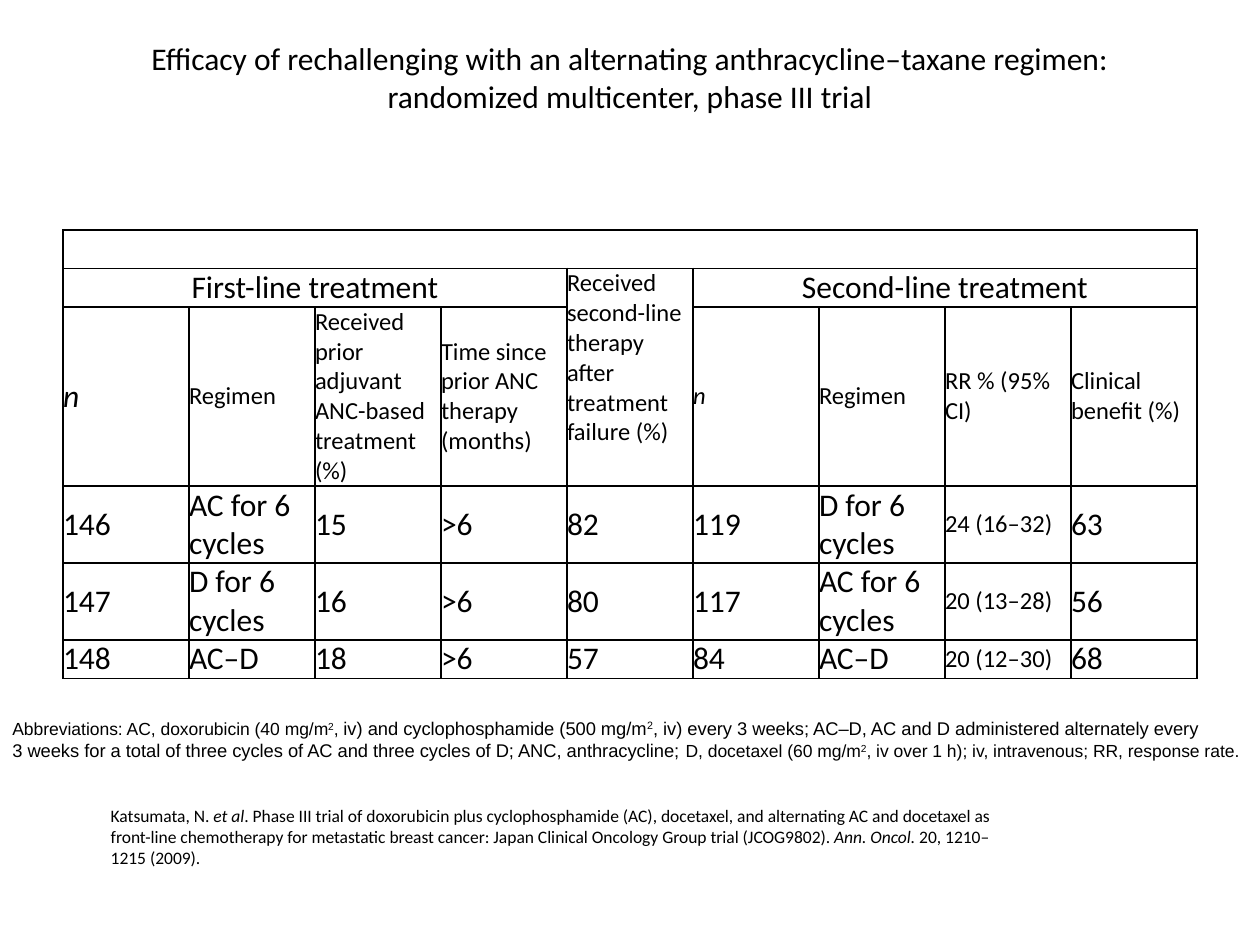
from lxml import etree
from pptx import Presentation
from pptx import util as u
from pptx.dml.color import RGBColor
from pptx.enum import text as t
from pptx.oxml import ns

Pt = u.Pt
BLACK = RGBColor(0, 0, 0)
CENTER = t.PP_ALIGN.CENTER
LEFT = t.PP_ALIGN.LEFT
MIDDLE = t.MSO_ANCHOR.MIDDLE
TOP = t.MSO_ANCHOR.TOP

HEADINGS = [
    "n", "Regimen", "Received prior adjuvant ANC-based treatment (%)",
    "Time since prior ANC therapy (months)", None,
    "n", "Regimen", "RR % (95% CI)", "Clinical benefit (%)",
]
RESULTS = [
    ["146", "AC for 6 cycles", "15", ">6", "82", "119", "D for 6 cycles", "24 (16–32)", "63"],
    ["147", "D for 6 cycles", "16", ">6", "80", "117", "AC for 6 cycles", "20 (13–28)", "56"],
    ["148", "AC–D", "18", ">6", "57", "84", "AC–D", "20 (12–30)", "68"],
]
ROW_HEIGHTS = [22, 22, 102.3, 44, 44, 22]
RESPONSE_COLUMN = 7


class SlideBuilder:
    font = "Calibri"

    def __init__(self, slide):
        self.slide = slide

    def add_run(self, paragraph, text, size, font=None, italic=False, superscript=False):
        run = paragraph.add_run()
        run.text = text
        run.font.name = font or self.font
        run.font.size = Pt(size)
        run.font.italic = italic
        run.font.color.rgb = BLACK
        if superscript:
            run.font._element.set("baseline", "30000")

    def title(self, text, left, top, width, height):
        shape = self.slide.shapes.title
        shape.left, shape.top, shape.width, shape.height = map(Pt, (left, top, width, height))
        frame = shape.text_frame
        frame.word_wrap = True
        frame.auto_size = t.MSO_AUTO_SIZE.NONE
        frame.vertical_anchor = MIDDLE
        frame.margin_left = frame.margin_right = Pt(20)
        frame.margin_top, frame.margin_bottom = Pt(0), Pt(45)
        paragraph = frame.paragraphs[0]
        paragraph.alignment = CENTER
        self.add_run(paragraph, text, 18)

    def text_box(self, paragraphs, left, top, width, height, font=None, wrap=True, anchor=TOP):
        shape = self.slide.shapes.add_textbox(*map(Pt, (left, top, width, height)))
        frame = shape.text_frame
        frame.word_wrap = wrap
        frame.auto_size = t.MSO_AUTO_SIZE.SHAPE_TO_FIT_TEXT
        frame.vertical_anchor = anchor
        for index, runs in enumerate(paragraphs):
            paragraph = frame.add_paragraph() if index else frame.paragraphs[0]
            for text, size, style in runs:
                self.add_run(paragraph, text, size, font, **style)

    def table(self, left, top, column_width, columns, row_heights):
        frame = self.slide.shapes.add_table(
            len(row_heights), columns, Pt(left), Pt(top),
            Pt(column_width * columns), Pt(sum(row_heights)))
        table = frame.table
        table.first_row = table.horz_banding = False
        for row, height in zip(table.rows, row_heights):
            row.height = Pt(height)
            for cell in row.cells:
                cell.margin_left = cell.margin_right = 0
                cell.margin_top = cell.margin_bottom = 0
                cell.vertical_anchor = MIDDLE
                self.borders(cell)
                cell.fill.background()
        return table

    def borders(self, cell):
        properties = cell._tc.get_or_add_tcPr()
        for side in ("a:lnL", "a:lnR", "a:lnT", "a:lnB"):
            line = etree.SubElement(properties, ns.qn(side), w=str(Pt(1)))
            fill = etree.SubElement(line, ns.qn("a:solidFill"))
            etree.SubElement(fill, ns.qn("a:srgbClr"), val=str(BLACK))

    def cell(self, cell, text, size, align=LEFT, anchor=MIDDLE, italic=False):
        cell.vertical_anchor = anchor
        paragraph = cell.text_frame.paragraphs[0]
        paragraph.alignment = align
        self.add_run(paragraph, text, size, italic=italic)


def add_trial_table(builder):
    table = builder.table(36, 131.4, 72, len(HEADINGS), ROW_HEIGHTS)
    for first, last in [((0, 0), (0, 8)), ((1, 0), (1, 3)), ((1, 4), (2, 4)), ((1, 5), (1, 8))]:
        table.cell(*first).merge(table.cell(*last))
    builder.cell(table.cell(1, 0), "First-line treatment", 18, CENTER)
    builder.cell(table.cell(1, 4), "Received second-line therapy after treatment failure (%)", 14, anchor=TOP)
    builder.cell(table.cell(1, 5), "Second-line treatment", 18, CENTER)
    for column, heading in enumerate(HEADINGS):
        if heading:
            builder.cell(table.cell(2, column), heading, 14 if column else 18, italic=heading == "n")
    for row, values in enumerate(RESULTS, 3):
        for column, value in enumerate(values):
            builder.cell(table.cell(row, column), value, 14 if column == RESPONSE_COLUMN else 18)


def main():
    presentation = Presentation()
    presentation.slide_width, presentation.slide_height = Pt(720), Pt(540)
    builder = SlideBuilder(presentation.slides.add_slide(presentation.slide_layouts[5]))
    builder.title(
        "Efficacy of rechallenging with an alternating anthracycline–taxane regimen: "
        "randomized multicenter, phase III trial", 36, 21.6, 648, 90)
    add_trial_table(builder)

    plain, italic, superscript = {}, {"italic": True}, {"superscript": True}
    builder.text_box([
        [("Abbreviations: AC, doxorubicin (40 mg/m", 10, plain),
         ("2", 10, superscript),
         (", ", 10, plain),
         ("iv) and cyclophosphamide (500 mg/m", 10.5, plain),
         ("2", 10.5, superscript),
         (", iv) every 3 weeks; AC–D, AC and D administered alternately every", 10.5, plain)],
        [("3 weeks for a total of three cycles of AC and three cycles of D; ANC, anthracycline; ", 10.5, plain),
         ("D, docetaxel (60 mg/m", 10, plain),
         ("2", 10, superscript),
         (", iv over 1 h); iv, intravenous; RR, response rate.", 10, plain)],
    ], 0, 406.1, 727.2, 32.4, font="Arial", wrap=False, anchor=MIDDLE)
    builder.text_box([
        [("Katsumata, N. ", 10, plain),
         ("et al", 10, italic),
         (". Phase III trial of doxorubicin plus cyclophosphamide (AC), docetaxel, and alternating "
          "AC and docetaxel as front-line chemotherapy for metastatic breast cancer: "
          "Japan Clinical Oncology Group trial (JCOG9802). ", 10, plain),
         ("Ann. Oncol.", 10, italic),
         (" 20, 1210–1215 (2009).", 10, plain)],
    ], 56.2, 456.5, 532, 43.9)
    presentation.save("out.pptx")


if __name__ == "__main__":
    main()
